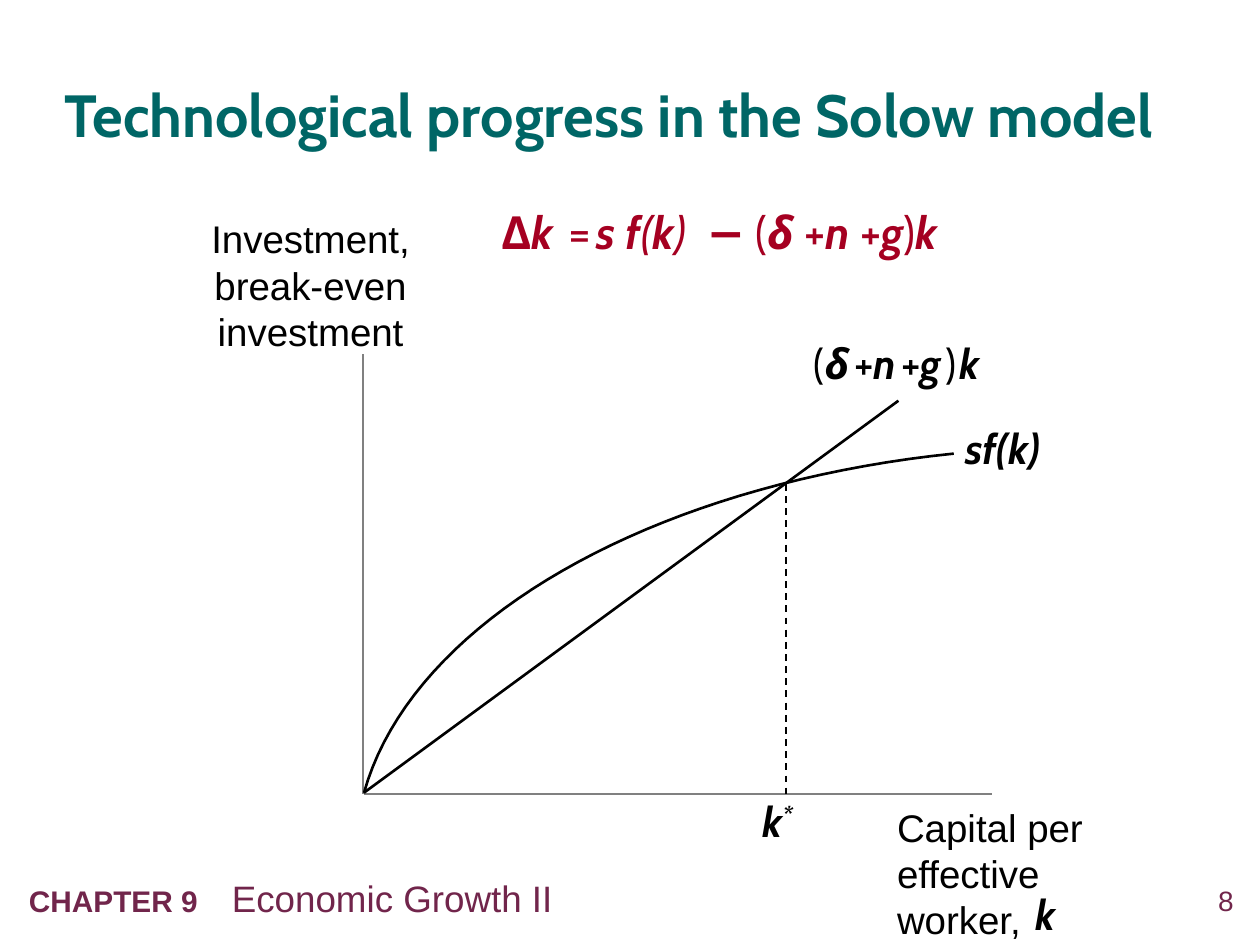
from dataclasses import dataclass

from lxml import etree
from pptx import Presentation
from pptx.dml.color import RGBColor
from pptx.enum.dml import MSO_LINE
from pptx.enum.shapes import MSO_CONNECTOR
from pptx.enum.text import MSO_ANCHOR, PP_ALIGN
from pptx.oxml.ns import qn
from pptx.util import Pt


@dataclass(frozen=True)
class Theme:
    body_font: str = "Arial"
    math_font: str = "Cabin"
    ink: str = "000000"
    paper: str = "FFFFFF"
    title: str = "006666"
    equation: str = "A50021"
    footer: str = "71254B"
    axis: str = "808080"
    title_size: int = 34
    equation_size: int = 26
    math_size: int = 24
    label_size: int = 22
    topic_size: int = 21
    chapter_size: int = 17
    number_size: int = 16
    thin: float = 1
    thick: float = 1.5


class Painter:
    def __init__(self, slide, theme):
        self.slide = slide
        self.theme = theme

    def style(self, font, name, size, color, bold=False, italic=False):
        font.name = name
        font.size = Pt(size)
        font.color.rgb = RGBColor.from_string(color)
        font.bold = bold
        font.italic = italic

    def title(self, text, left, top, width, height):
        box = self.slide.shapes.title
        box.left, box.top, box.width, box.height = map(Pt, (left, top, width, height))
        frame = box.text_frame
        self.set_margins(frame, (0, 0, 0, 0))
        frame.vertical_anchor = MSO_ANCHOR.MIDDLE
        para = frame.paragraphs[0]
        para.text = text
        para.alignment = PP_ALIGN.LEFT
        para.line_spacing = 1.05
        theme = self.theme
        self.style(para.font, theme.math_font, theme.title_size, theme.title, bold=True)

    def set_margins(self, frame, margins):
        left, top, right, bottom = map(Pt, margins)
        frame.margin_left, frame.margin_top = left, top
        frame.margin_right, frame.margin_bottom = right, bottom

    def text(self, place, font, size, color, align=PP_ALIGN.LEFT,
             anchor=MSO_ANCHOR.MIDDLE, margins=(0, 0, 0, 0), wrap=True):
        box = self.slide.shapes.add_textbox(*map(Pt, place))
        frame = box.text_frame
        frame.word_wrap = wrap
        frame.vertical_anchor = anchor
        self.set_margins(frame, margins)
        para = frame.paragraphs[0]
        para.alignment = align
        self.style(para.font, font, size, color)
        return box, para

    def label(self, text, place, size, color, **options):
        box, para = self.text(place, self.theme.body_font, size, color, **options)
        para.text = text
        return box

    def formula(self, parts, place, size, color, **options):
        box, para = self.text(place, self.theme.math_font, size, color, **options)
        for text, flags, *scale in parts:
            span = para.add_run()
            span.text = text
            span.font.bold = "b" in flags
            span.font.italic = "i" in flags
            if scale:
                span.font.size = Pt(size * scale[0])
            if "^" in flags:
                span.font._element.set("baseline", "30000")
        return box

    def footer(self, chapter, topic, place, tab):
        theme = self.theme
        box, para = self.text(place, theme.body_font, theme.topic_size, theme.footer,
                              anchor=MSO_ANCHOR.TOP, margins=(7.2, 3.6, 7.2, 3.6))
        span = para.add_run()
        span.text = chapter + "\t"
        span.font.size = Pt(theme.chapter_size)
        span.font.bold = True
        para.add_run().text = topic
        properties = para._p.get_or_add_pPr()
        stops = etree.Element(qn("a:tabLst"))
        etree.SubElement(stops, qn("a:tab"), pos=str(Pt(tab)), algn="l")
        properties.insert(0, stops)

    def fill(self, box, color, opacity=100):
        box.fill.solid()
        box.fill.fore_color.rgb = RGBColor.from_string(color)
        if opacity < 100:
            tint = box._element.spPr.find(".//" + qn("a:srgbClr"))
            etree.SubElement(tint, qn("a:alpha"), val=str(opacity * 1000))

    def outline(self, line, color, width):
        line.color.rgb = RGBColor.from_string(color)
        line.width = Pt(width)

    def line(self, start, end, color, width, dashed=False):
        connector = self.slide.shapes.add_connector(
            MSO_CONNECTOR.STRAIGHT, *map(Pt, start + end))
        self.outline(connector.line, color, width)
        if dashed:
            connector.line.dash_style = MSO_LINE.DASH
        etree.SubElement(connector._element.spPr, qn("a:effectLst"))

    def curve(self, controls, color, width, steps=40):
        points = []
        for step in range(steps + 1):
            t = step / steps
            weights = ((1 - t) ** 3, 3 * t * (1 - t) ** 2, 3 * t * t * (1 - t), t ** 3)
            points.append(tuple(
                Pt(sum(weight * value for weight, value in zip(weights, values)))
                for values in zip(*controls)))
        builder = self.slide.shapes.build_freeform(*points[0])
        builder.add_line_segments(points[1:], close=False)
        shape = builder.convert_to_shape()
        shape.fill.background()
        shape.shadow.inherit = False
        self.outline(shape.line, color, width)


def main():
    theme = Theme()
    deck = Presentation()
    deck.slide_width, deck.slide_height = Pt(720), Pt(540)
    page = deck.slides.add_slide(deck.slide_layouts[5])
    painter = Painter(page, theme)

    painter.label("8", (665.3, 504.7, 39.6, 23), theme.number_size, theme.footer,
                  align=PP_ALIGN.RIGHT, anchor=MSO_ANCHOR.TOP)
    painter.footer("CHAPTER 9", "Economic Growth II", (9.4, 496.8, 589, 32.4), tab=116)
    painter.title("Technological progress in the Solow model", 36.7, 21.6, 640.8, 84.2)

    origin = (208, 453)
    steady_state = 449.3
    painter.line((207.4, 177.8), (207.4, 453.6), theme.axis, theme.thin)
    painter.line((208, 453.6), (566.6, 453.6), theme.axis, theme.thin)
    vertical = painter.label("Investment, break-even investment", (105.1, 123.1, 144.7, 79.2),
                             theme.label_size, theme.ink, align=PP_ALIGN.CENTER)
    painter.fill(vertical, theme.paper)
    painter.label("Capital per effective worker,", (512.6, 457.9, 126, 82.1),
                  theme.label_size, theme.ink)

    painter.curve(((545, 259.2), (370.8, 277.2), (235.4, 355), origin),
                  theme.ink, theme.thick)
    painter.line(origin, (513.4, 229), theme.ink, theme.thick)
    painter.line((steady_state, 276.5), (steady_state, 453.6), theme.ink, theme.thin,
                 dashed=True)

    painter.formula([("sf(k)", "bi")], (551.5, 241.2, 74.9, 28.8), theme.math_size, theme.ink)
    painter.formula(
        [("(", ""), ("δ", "bi"), (" ", "", 0.5), ("+", ""), ("n", "bi"), (" ", "", 0.5),
         ("+", ""), ("g", "bi"), (" ", "", 0.5), (")", ""), (" ", "", 0.25), ("k", "bi")],
        (465.1, 193, 138.2, 28.8), theme.math_size, theme.ink)
    painter.formula([("k", "bi"), ("*", "bi^")], (435.6, 454.3, 41.8, 36),
                    theme.math_size, theme.ink, margins=(0, 0, 0, 7.2))
    equation = painter.formula(
        [("Δ", "b"), ("k ", "bi"), (" ", "", 0.5), ("=", ""), (" ", "", 0.5), ("s f", "bi"),
         ("(", "i"), ("k", "bi"), (") ", "i"), (" − ", "b"), ("(", ""), ("δ ", "bi"),
         ("+", ""), ("n ", "bi"), ("+", ""), ("g", "bi"), (")", ""), ("k", "bi")],
        (279.4, 113, 329.8, 38.2), theme.equation_size, theme.equation,
        anchor=MSO_ANCHOR.TOP, margins=(7.2, 3.6, 7.2, 3.6))
    painter.fill(equation, theme.paper, opacity=50)
    painter.formula([("k", "bi")], (584.6, 504, 33.8, 36), theme.math_size, theme.ink,
                    anchor=MSO_ANCHOR.TOP, margins=(7.2, 3.6, 7.2, 3.6), wrap=False)

    deck.save("out.pptx")


if __name__ == "__main__":
    main()
